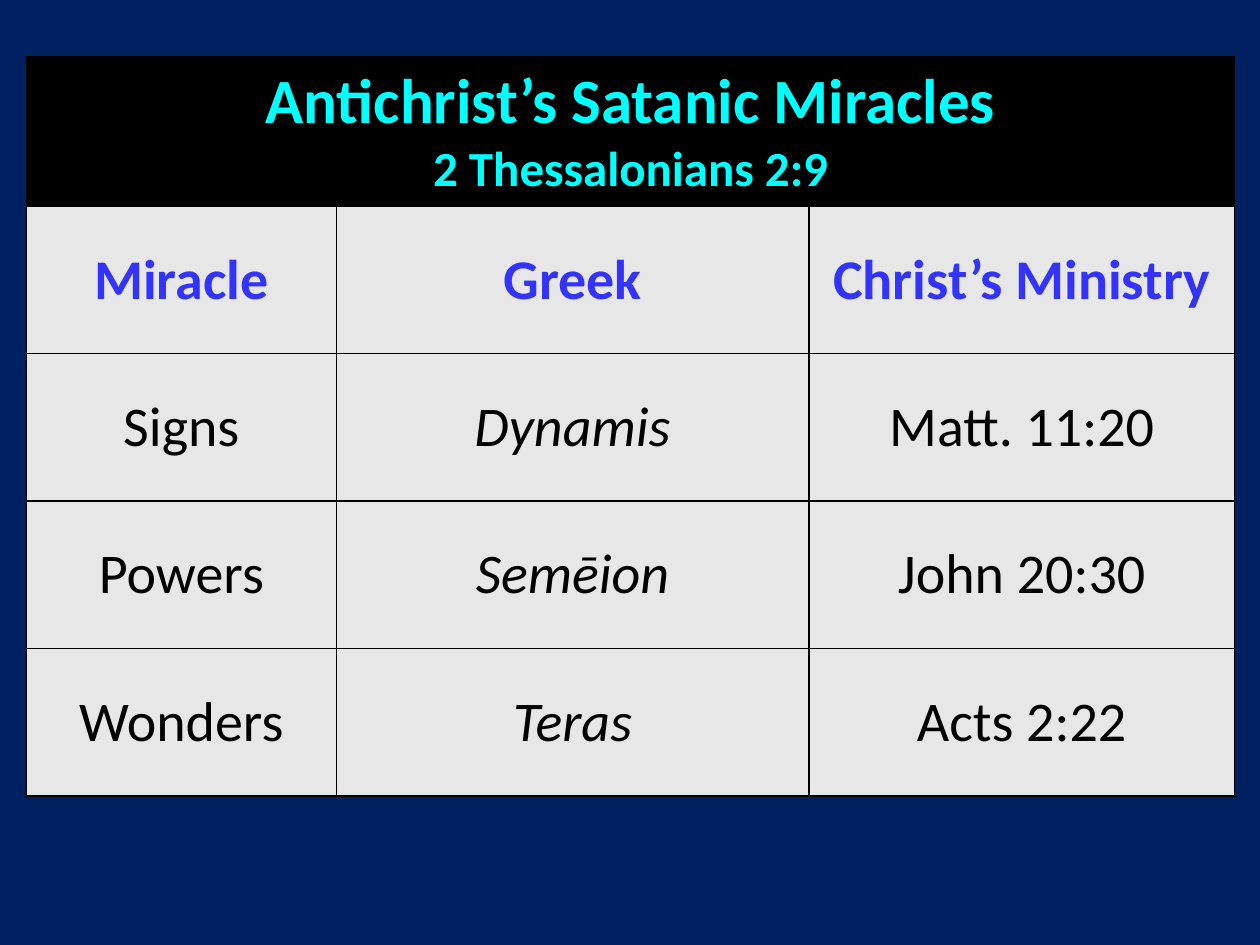
from lxml.etree import SubElement
from pptx import Presentation
from pptx.dml.color import RGBColor
from pptx.enum.text import MSO_ANCHOR, PP_ALIGN
from pptx.oxml.ns import qn
from pptx.util import Inches, Pt

NAVY, BLACK, GREY = "002060", "000000", "E7E7E7"
CYAN, BLUE = "00FFFF", "3333FF"

LEFT, TOP = 0.21, 0.45
COLUMN_WIDTHS = [2.46, 3.75, 3.38]
ROW_HEIGHT = 1.17
GREEK_COLUMN = 1

HEADING = "Antichrist’s Satanic Miracles"
PASSAGE = "2 Thessalonians 2:9"
MIRACLES = [
    ("Miracle", "Greek", "Christ’s Ministry"),
    ("Signs", "Dynamis", "Matt. 11:20"),
    ("Powers", "Semēion", "John 20:30"),
    ("Wonders", "Teras", "Acts 2:22"),
]


def paint(fill, color):
    fill.solid()
    fill.fore_color.rgb = RGBColor.from_string(color)


def add_borders(cell, color=BLACK, width=1):
    """Outline a cell; call before filling, as the lines precede the fill in XML."""
    properties = cell._tc.get_or_add_tcPr()
    for side in ("a:lnL", "a:lnR", "a:lnT", "a:lnB"):
        line = SubElement(properties, qn(side), w=str(Pt(width)))
        solid = SubElement(line, qn("a:solidFill"))
        SubElement(solid, qn("a:srgbClr"), val=color)


def style_cell(cell, color):
    add_borders(cell)
    paint(cell.fill, color)
    cell.vertical_anchor = MSO_ANCHOR.MIDDLE


def write(paragraph, text, size, color, bold=False, italic=False):
    paragraph.text = text
    paragraph.alignment = PP_ALIGN.CENTER
    font = paragraph.font
    font.name, font.size = "Calibri", Pt(size)
    font.bold, font.italic = bold, italic
    font.color.rgb = RGBColor.from_string(color)


def add_miracle_table(slide):
    row_count, column_count = len(MIRACLES) + 1, len(COLUMN_WIDTHS)
    table = slide.shapes.add_table(
        row_count, column_count, Inches(LEFT), Inches(TOP),
        Inches(sum(COLUMN_WIDTHS)), Inches(ROW_HEIGHT * row_count)).table
    for column, width in zip(table.columns, COLUMN_WIDTHS):
        column.width = Inches(width)
    for row in table.rows:
        row.height = Inches(ROW_HEIGHT)
    return table


def fill_heading(table):
    for column in range(len(COLUMN_WIDTHS)):
        style_cell(table.cell(0, column), BLACK)
    heading = table.cell(0, 0)
    heading.merge(table.cell(0, len(COLUMN_WIDTHS) - 1))
    frame = heading.text_frame
    write(frame.paragraphs[0], HEADING, 36, CYAN, bold=True)
    write(frame.add_paragraph(), PASSAGE, 28, CYAN, bold=True)


def fill_miracles(table):
    for row, entries in enumerate(MIRACLES, start=1):
        is_label = row == 1
        for column, entry in enumerate(entries):
            cell = table.cell(row, column)
            style_cell(cell, GREY)
            write(cell.text_frame.paragraphs[0], entry, 32,
                  BLUE if is_label else BLACK, bold=is_label,
                  italic=column == GREEK_COLUMN and not is_label)


def main():
    presentation = Presentation()
    presentation.slide_width, presentation.slide_height = Inches(10), Inches(7.5)
    slide = presentation.slides.add_slide(presentation.slide_layouts[6])
    paint(slide.background.fill, NAVY)
    table = add_miracle_table(slide)
    fill_heading(table)
    fill_miracles(table)
    presentation.save("out.pptx")


if __name__ == "__main__":
    main()
